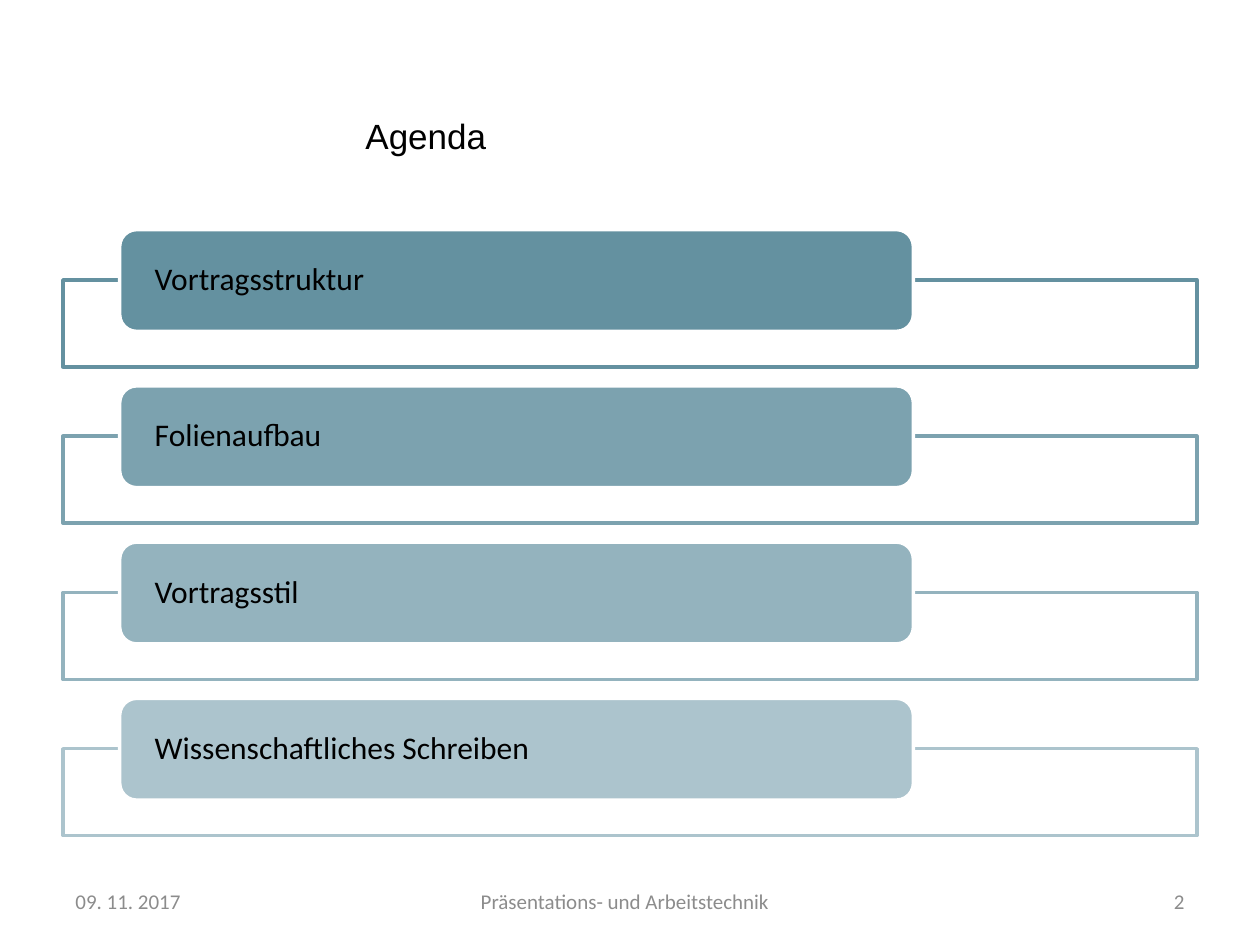
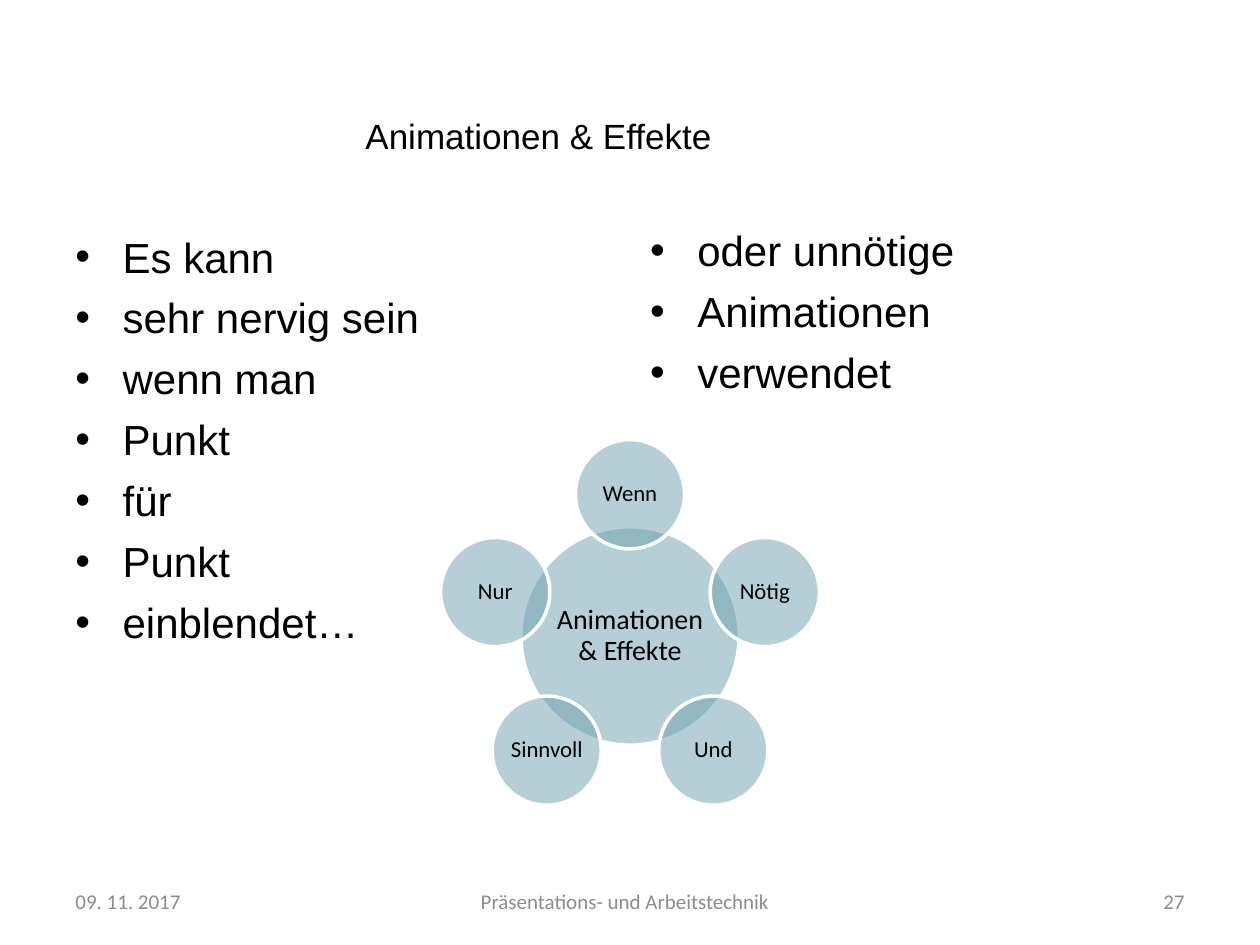
"""Build two slides on presentation technique: an agenda and a page on animations."""
from math import cos, pi, sin

from lxml.etree import SubElement
from pptx import Presentation
from pptx.dml.color import RGBColor
from pptx.enum.shapes import MSO_SHAPE as SHAPE
from pptx.enum.text import MSO_ANCHOR as ANCHOR, MSO_AUTO_SIZE as AUTO, PP_ALIGN as ALIGN
from pptx.oxml.ns import qn
from pptx.util import Pt

BLACK = RGBColor(0x00, 0x00, 0x00)
WHITE = RGBColor(0xFF, 0xFF, 0xFF)
GREY = RGBColor(0x8C, 0x8C, 0x8C)
TEAL = RGBColor(0x6E, 0xA0, 0xB0)
AGENDA_COLORS = (
    RGBColor(0x64, 0x91, 0xA0),
    RGBColor(0x7C, 0xA2, 0xAF),
    RGBColor(0x94, 0xB3, 0xBE),
    RGBColor(0xAC, 0xC4, 0xCD),
)
HEADING_FONT = "Arial"
LABEL_FONT = "Calibri"
DATE = "09. 11. 2017"
FOOTER = "Präsentations- und Arbeitstechnik"


def write(sp, *lines, size, font=LABEL_FONT, color=BLACK, align=ALIGN.LEFT,
          anchor=ANCHOR.MIDDLE, insets=(7.2, 3.6, 7.2, 3.6), wrap=True,
          spacing=None, gap=0, bullet=None, indent=27):
    tf = sp.text_frame
    tf.auto_size = AUTO.NONE
    tf.word_wrap = wrap
    tf.vertical_anchor = anchor
    tf.margin_left, tf.margin_top, tf.margin_right, tf.margin_bottom = map(Pt, insets)
    for i, line in enumerate(lines):
        p = tf.add_paragraph() if i else tf.paragraphs[0]
        p.alignment = align
        if spacing:
            p.line_spacing = spacing
        if i and gap:
            p.space_before = Pt(gap)
        if bullet:
            pPr = p._p.get_or_add_pPr()
            pPr.set("marL", str(Pt(indent)))
            pPr.set("indent", str(-Pt(indent)))
            SubElement(pPr, qn("a:buFont")).set("typeface", HEADING_FONT)
            SubElement(pPr, qn("a:buChar")).set("char", bullet)
        r = p.add_run()
        r.text = line
        r.font.name = font
        r.font.size = Pt(size)
        r.font.color.rgb = color


class Deck:
    def __init__(self):
        self.prs = Presentation()
        self.prs.slide_width, self.prs.slide_height = Pt(720), Pt(540)
        self.s = None

    def slide(self, title, number):
        self.s = self.prs.slides.add_slide(self.prs.slide_layouts[5])
        sp = self.s.shapes.title
        sp.left, sp.top, sp.width, sp.height = map(Pt, (201.6, 9.4, 345.6, 83.5))
        write(sp, title, size=20, font=HEADING_FONT, anchor=ANCHOR.BOTTOM)
        footers = (
            (DATE, 36, 168, ALIGN.LEFT),
            (FOOTER, 178.6, 357, ALIGN.CENTER),
            (str(number), 516, 168, ALIGN.RIGHT),
        )
        for text, left, width, align in footers:
            self.text((left, 500.5, width, 28.75), text, size=12, color=GREY, align=align)

    def text(self, box, *lines, **style):
        sp = self.s.shapes.add_textbox(*map(Pt, box))
        write(sp, *lines, **style)

    def bullets(self, box, *lines):
        self.text(box, *lines, size=24, font=HEADING_FONT, anchor=ANCHOR.TOP,
                  insets=(7.2, 6, 7.2, 3.6), gap=6, bullet="•")

    def shape(self, kind, box, fill, line=WHITE, alpha=None):
        sp = self.s.shapes.add_shape(kind, *map(Pt, box))
        sp.shadow.inherit = False
        sp.fill.solid()
        sp.fill.fore_color.rgb = fill
        if alpha:
            clr = sp.fill._xPr.find(qn("a:solidFill"))[0]
            SubElement(clr, qn("a:alpha")).set("val", str(alpha * 1000))
        sp.line.color.rgb = line
        sp.line.width = Pt(2)
        return sp

    def agenda_item(self, top, text, color):
        self.shape(SHAPE.RECTANGLE, (36, top + 28.8, 648, 49.7), WHITE, color, alpha=90)
        sp = self.shape(SHAPE.ROUNDED_RECTANGLE, (68.4, top, 453.6, 58.2), color)
        write(sp, text, size=18, insets=(17.2, 0, 17.2, 0), spacing=0.9)

    def circle(self, x, y, diameter, text, size, wrap=False):
        box = (x - diameter / 2, y - diameter / 2, diameter, diameter)
        sp = self.shape(SHAPE.OVAL, box, TEAL, alpha=50)
        write(sp, text, size=size, align=ALIGN.CENTER, insets=(1.4,) * 4,
              wrap=wrap, spacing=0.9)


def agenda(deck):
    deck.slide("Agenda", 2)
    topics = ("Vortragsstruktur", "Folienaufbau", "Vortragsstil", "Wissenschaftliches Schreiben")
    for i, (topic, color) in enumerate(zip(topics, AGENDA_COLORS)):
        deck.agenda_item(131.2 + i * 89.28, topic, color)


def animations(deck):
    title = "Animationen & Effekte"
    deck.slide(title, 27)
    deck.bullets((36, 126, 324, 356.4), "Es kann", "sehr nervig sein", "wenn man",
                 "Punkt", "für", "Punkt", "einblendet…")
    deck.bullets((364.4, 122.4, 324, 356.4), "oder unnötige", "Animationen", "verwendet")
    x, y, diameter, orbit = 360, 363.4, 124.8, 81
    deck.circle(x, y, diameter, title, 16, wrap=True)
    words = ("Wenn", "Nötig", "Und", "Sinnvoll", "Nur")
    for i, word in enumerate(words):
        angle = 2 * pi * i / len(words)
        deck.circle(x + orbit * sin(angle), y - orbit * cos(angle), diameter / 2, word, 13)


def main():
    deck = Deck()
    agenda(deck)
    animations(deck)
    deck.prs.save("out.pptx")


if __name__ == "__main__":
    main()
